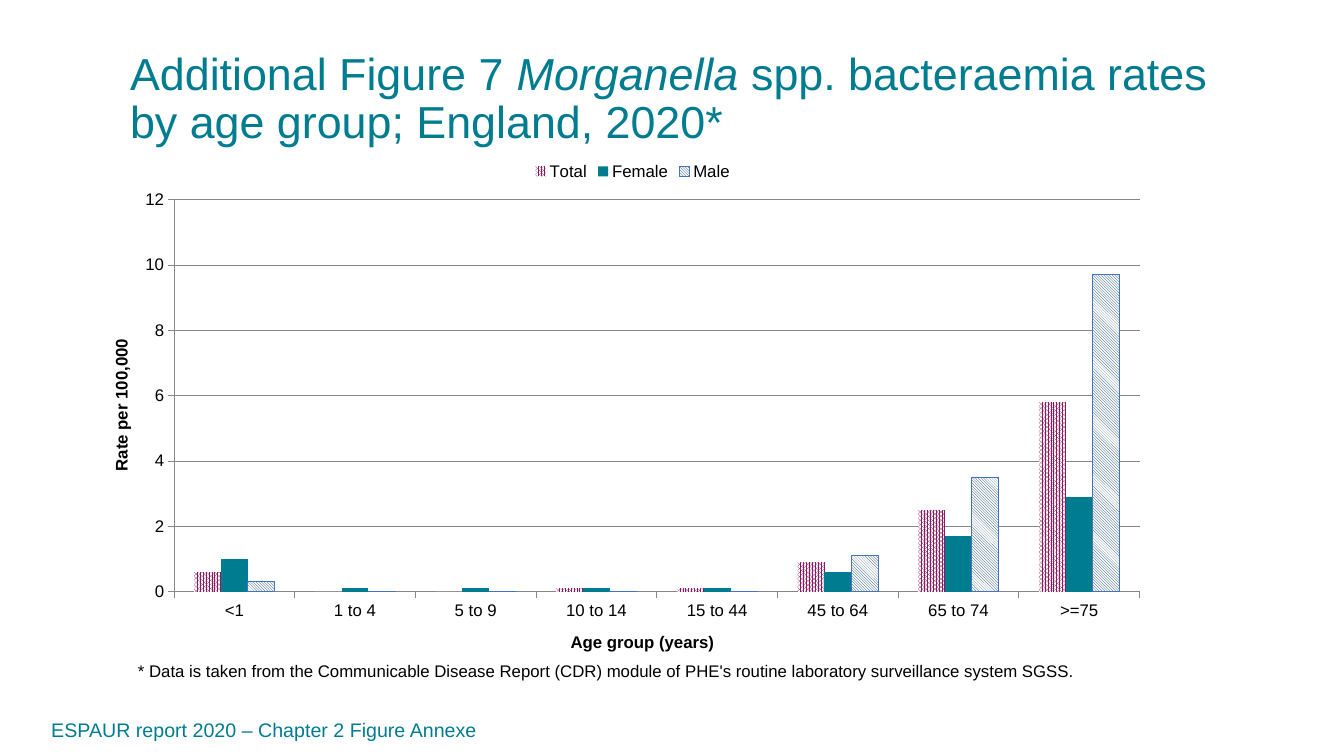
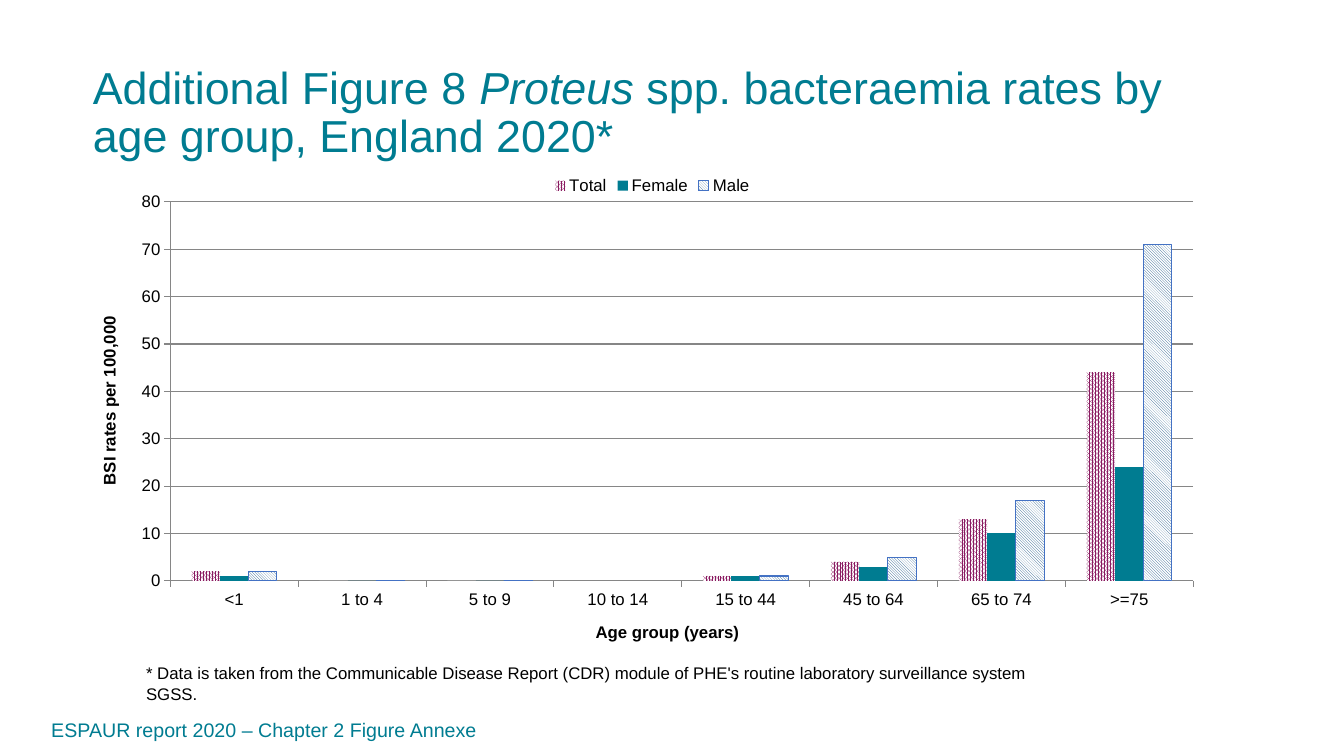
from lxml import etree
from pptx import Presentation
from pptx import util as u
from pptx.chart.data import CategoryChartData
from pptx.dml.color import RGBColor
from pptx.enum import chart as ch
from pptx.enum import dml, text
from pptx.oxml.ns import qn

FONT = "Arial"
COLORS = {
    "teal": "007C91",
    "plum": "8A1B61",
    "navy": "003B5C",
    "blue": "1D5787",
    "outline": "4472C4",
    "grid": "868686",
    "black": "000000",
    "white": "FFFFFF",
}
AGE_GROUPS = ["<1", "1 to 4", "5 to 9", "10 to 14", "15 to 44", "45 to 64", "65 to 74", ">=75"]
FOOTNOTE = ("* Data is taken from the Communicable Disease Report (CDR) module of PHE's "
            "routine laboratory surveillance system SGSS.")
FOOTER = "ESPAUR report 2020 – Chapter 2 Figure Annexe"
FOOTER_BOX = (0.35, 7.04, 4.48, 0.4)

FIGURES = [
    {
        "title": ("Additional Figure 7 ", "Morganella ",
                  "spp. bacteraemia rates by age group; England, 2020*"),
        "title_box": (1.19, 0.46, 11.28, 0.71),
        "note_box": (1.27, 6.51, 9.97, 0.3),
        "chart_box": (1.07, 1.5, 10.41, 5.02),
        "plot": (0.063, 0.096, 0.92, 0.775),
        "rate_title": "Rate per 100,000",
        "scale": (12, 2),
        "male_color": "navy",
        "rates": {
            "Total": (0.6, 0, 0, 0.1, 0.1, 0.9, 2.5, 5.8),
            "Female": (1, 0.1, 0.1, 0.1, 0.1, 0.6, 1.7, 2.9),
            "Male": (0.3, 0, 0, 0, 0, 1.1, 3.5, 9.7),
        },
    },
    {
        "title": ("Additional Figure 8 ", "Proteus ",
                  "spp. bacteraemia rates by age group, England 2020*"),
        "title_box": (0.82, 0.6, 11.04, 0.71),
        "note_box": (1.35, 6.53, 9.49, 0.3),
        "chart_box": (0.95, 1.64, 11.04, 4.85),
        "plot": (0.067, 0.075, 0.919, 0.775),
        "rate_title": "BSI rates per 100,000",
        "scale": (80, 10),
        "male_color": "blue",
        "rates": {
            "Total": (2, 0, 0, None, 1, 4, 13, 44),
            "Female": (1, 0, 0, None, 1, 3, 10, 24),
            "Male": (2, 0, 0, None, 1, 5, 17, 71),
        },
    },
]


def rgb(name):
    return RGBColor.from_string(COLORS[name])


def inches(box):
    return [u.Inches(length) for length in box]


def style_font(font, size, color, bold=False):
    font.name = FONT
    font.size = u.Pt(size)
    font.bold = bold
    font.color.rgb = rgb(color)


def add_title(slide, parts, box):
    """Fill the title placeholder; the middle part is the italic genus name."""
    title = slide.shapes.title
    title.left, title.top, title.width, title.height = inches(box)
    frame = title.text_frame
    frame.auto_size = text.MSO_AUTO_SIZE.NONE
    frame.vertical_anchor = text.MSO_ANCHOR.TOP
    paragraph = frame.paragraphs[0]
    paragraph.alignment = text.PP_ALIGN.LEFT
    paragraph.line_spacing = 0.9
    style_font(paragraph.font, 32, "teal")
    for part in parts:
        run = paragraph.add_run()
        run.text = part
    paragraph.runs[1].font.italic = True


def add_text(slide, words, box, size, color, align=text.PP_ALIGN.LEFT, anchor=text.MSO_ANCHOR.TOP):
    frame = slide.shapes.add_textbox(*inches(box)).text_frame
    frame.word_wrap = True
    frame.vertical_anchor = anchor
    paragraph = frame.paragraphs[0]
    paragraph.text = words
    paragraph.alignment = align
    style_font(paragraph.font, size, color)


def set_plot_area(chart, fractions):
    """Fix the inner plot area, in fractions of the chart's size."""
    plot_area = chart._chartSpace.chart.plotArea
    for old_layout in plot_area.findall(qn("c:layout")):
        plot_area.remove(old_layout)
    layout = etree.Element(qn("c:layout"))
    manual = etree.SubElement(layout, qn("c:manualLayout"))
    settings = [("layoutTarget", "inner"), ("xMode", "edge"), ("yMode", "edge")]
    settings += zip("xywh", fractions)
    for tag, value in settings:
        etree.SubElement(manual, qn(f"c:{tag}")).set("val", str(value))
    plot_area.insert(0, layout)


def style_axis(axis, title):
    axis.major_tick_mark = ch.XL_TICK_MARK.OUTSIDE
    axis.minor_tick_mark = ch.XL_TICK_MARK.NONE
    axis.format.line.color.rgb = rgb("grid")
    axis.format.line.width = u.Pt(0.75)
    paragraph = axis.axis_title.text_frame.paragraphs[0]
    paragraph.text = title
    style_font(paragraph.font, 12, "black", bold=True)


def fill_pattern(series, pattern, color):
    fill = series.format.fill
    fill.patterned()
    fill.pattern = pattern
    fill.fore_color.rgb = rgb(color)
    fill.back_color.rgb = rgb("white")


def style_series(plot, male_color):
    total, female, male = plot.series
    fill_pattern(total, dml.MSO_PATTERN.PERCENT_80, "plum")
    female.format.fill.solid()
    female.format.fill.fore_color.rgb = rgb("teal")
    fill_pattern(male, dml.MSO_PATTERN.DARK_DOWNWARD_DIAGONAL, male_color)
    male.format.line.color.rgb = rgb("outline")
    male.format.line.width = u.Pt(0.75)


def add_rate_chart(slide, figure):
    data = CategoryChartData()
    data.categories = AGE_GROUPS
    for name, rates in figure["rates"].items():
        data.add_series(name, rates)
    chart = slide.shapes.add_chart(
        ch.XL_CHART_TYPE.COLUMN_CLUSTERED, *inches(figure["chart_box"]), data).chart
    style_font(chart.font, 12, "black")
    chart.has_title = False
    chart.has_legend = True
    chart.legend.position = ch.XL_LEGEND_POSITION.TOP
    chart.legend.include_in_layout = False

    style_axis(chart.category_axis, "Age group (years)")
    rate_axis = chart.value_axis
    style_axis(rate_axis, figure["rate_title"])
    rate_axis.minimum_scale = 0
    rate_axis.maximum_scale, rate_axis.major_unit = figure["scale"]
    rate_axis.tick_labels.number_format = "#,##0"
    rate_axis.tick_labels.number_format_is_linked = False
    rate_axis.major_gridlines.format.line.color.rgb = rgb("grid")
    rate_axis.major_gridlines.format.line.width = u.Pt(0.75)

    plot = chart.plots[0]
    plot.vary_by_categories = False
    plot.gap_width = 150
    plot.overlap = 0
    style_series(plot, figure["male_color"])
    set_plot_area(chart, figure["plot"])


def add_figure_slide(presentation, figure):
    slide = presentation.slides.add_slide(presentation.slide_layouts.get_by_name("Title Only"))
    add_title(slide, figure["title"], figure["title_box"])
    add_text(slide, FOOTNOTE, figure["note_box"], 12, "black")
    add_rate_chart(slide, figure)
    add_text(slide, FOOTER, FOOTER_BOX, 14, "teal",
             text.PP_ALIGN.RIGHT, text.MSO_ANCHOR.MIDDLE)


def main():
    presentation = Presentation()
    presentation.slide_width = u.Inches(13.33)
    presentation.slide_height = u.Inches(7.5)
    for figure in FIGURES:
        add_figure_slide(presentation, figure)
    presentation.save("out.pptx")


if __name__ == "__main__":
    main()
